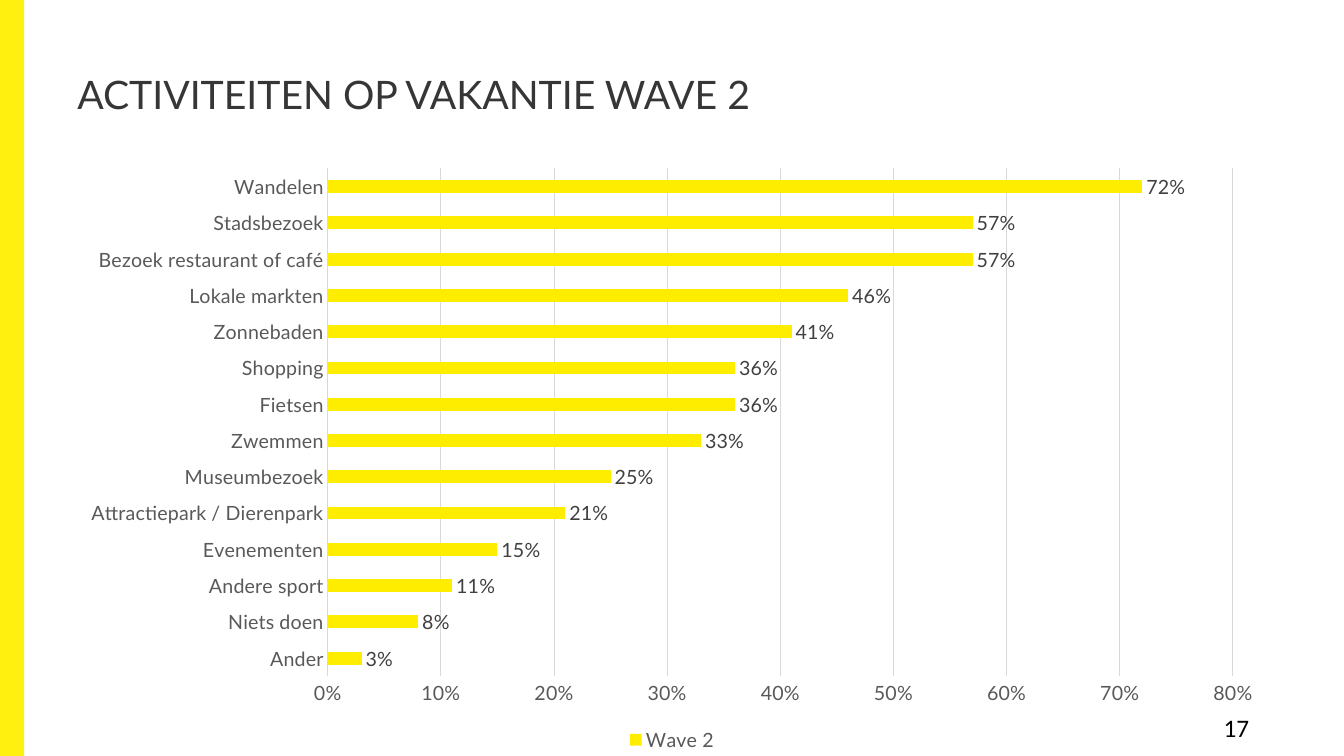
from dataclasses import dataclass

from pptx import Presentation
from pptx import util as u
from pptx.chart.data import CategoryChartData
from pptx.dml.color import RGBColor
from pptx.enum import chart as charts, shapes, text

WIDTH, HEIGHT = u.Inches(13.33), u.Inches(7.5)
MARGIN = 0.05
CONTENT_WIDTH = 0.9
CHART_TOP = 0.207

ACTIVITIES = {
    "Wandelen": 0.72,
    "Stadsbezoek": 0.57,
    "Bezoek restaurant of café": 0.57,
    "Lokale markten": 0.46,
    "Zonnebaden": 0.41,
    "Shopping": 0.36,
    "Fietsen": 0.36,
    "Zwemmen": 0.33,
    "Museumbezoek": 0.25,
    "Attractiepark / Dierenpark": 0.21,
    "Evenementen": 0.15,
    "Andere sport": 0.11,
    "Niets doen": 0.08,
    "Ander": 0.03,
}


@dataclass(frozen=True)
class Theme:
    """Colours, fonts and type sizes of the slide."""

    band: str = "FFF010"
    bar: str = "FFED00"
    title: str = "373636"
    label: str = "404040"
    axis: str = "595959"
    grid: str = "D9D9D9"
    number: str = "000000"
    font: str = "Lato"
    number_font: str = "Calibri"
    title_size: int = 28
    number_size: int = 18
    chart_size: int = 14


THEME = Theme()


def area(left, top, width, height):
    """Turn shares of the slide into a position and size."""
    return (u.Emu(round(left * WIDTH)), u.Emu(round(top * HEIGHT)),
            u.Emu(round(width * WIDTH)), u.Emu(round(height * HEIGHT)))


def style_font(font, size, color, name=THEME.font):
    """Set the size, colour and typeface of a font."""
    font.size = u.Pt(size)
    font.name = name
    font.bold = False
    font.color.rgb = RGBColor.from_string(color)


def style_line(line, color):
    """Draw a thin line in the given colour."""
    line.width = u.Pt(0.75)
    line.color.rgb = RGBColor.from_string(color)


def add_band(slide):
    """Add the coloured band along the left edge."""
    band = slide.shapes.add_shape(shapes.MSO_SHAPE.RECTANGLE, *area(0, 0, 0.018, 1))
    band.shadow.inherit = False
    band.fill.solid()
    band.fill.fore_color.rgb = RGBColor.from_string(THEME.band)
    band.line.fill.background()


def set_title(slide, wording):
    """Place and format the title placeholder."""
    title = slide.shapes.title
    title.left, title.top, title.width, title.height = area(
        MARGIN, 0.04, CONTENT_WIDTH, CHART_TOP - 0.04)
    frame = title.text_frame
    frame.text = wording
    frame.vertical_anchor = text.MSO_ANCHOR.MIDDLE
    paragraph = frame.paragraphs[0]
    paragraph.alignment = text.PP_ALIGN.LEFT
    style_font(paragraph.runs[0].font, THEME.title_size, THEME.title)


def add_page_number(slide, number):
    """Add the page number at the lower right."""
    box = slide.shapes.add_textbox(*area(0.903, 0.936, 0.047, 0.053))
    frame = box.text_frame
    frame.word_wrap = True
    frame.text = str(number)
    style_font(frame.paragraphs[0].runs[0].font,
               THEME.number_size, THEME.number, THEME.number_font)


def style_axis(axis):
    """Give an axis its label font and remove the tick marks."""
    axis.major_tick_mark = charts.XL_TICK_MARK.NONE
    axis.minor_tick_mark = charts.XL_TICK_MARK.NONE
    style_font(axis.tick_labels.font, THEME.chart_size, THEME.axis)


def style_axes(chart):
    """Format the category axis, the percentage axis and its grid."""
    categories, values = chart.category_axis, chart.value_axis
    style_axis(categories)
    style_axis(values)
    style_line(categories.format.line, THEME.grid)
    values.format.line.fill.background()
    values.has_major_gridlines = True
    style_line(values.major_gridlines.format.line, THEME.grid)
    values.minimum_scale, values.maximum_scale, values.major_unit = 0, 0.8, 0.1
    values.tick_labels.number_format = "0%"
    values.tick_labels.number_format_is_linked = False


def style_bars(plot):
    """Colour the bars and show their values at the ends."""
    plot.gap_width = 182
    plot.vary_by_categories = False
    fill = plot.series[0].format.fill
    fill.solid()
    fill.fore_color.rgb = RGBColor.from_string(THEME.bar)
    labels = plot.series[0].data_labels
    labels.show_value = True
    labels.position = charts.XL_LABEL_POSITION.OUTSIDE_END
    labels.number_format = "0%"
    labels.number_format_is_linked = False
    style_font(labels.font, THEME.chart_size, THEME.label)


def add_bar_chart(slide, name, activities):
    """Add the bar chart with the first activity at the top."""
    data = CategoryChartData(number_format="0%")
    data.categories = list(reversed(activities))
    data.add_series(name, list(reversed(activities.values())))
    chart = slide.shapes.add_chart(
        charts.XL_CHART_TYPE.BAR_CLUSTERED,
        *area(MARGIN, CHART_TOP, CONTENT_WIDTH, 1 - CHART_TOP), data).chart
    style_font(chart.font, THEME.chart_size, THEME.number)
    chart.has_title = False
    chart.has_legend = True
    chart.legend.position = charts.XL_LEGEND_POSITION.BOTTOM
    chart.legend.include_in_layout = False
    style_font(chart.legend.font, THEME.chart_size, THEME.axis)
    style_axes(chart)
    style_bars(chart.plots[0])


def main():
    """Build the slide and save it."""
    presentation = Presentation()
    presentation.slide_width, presentation.slide_height = WIDTH, HEIGHT
    slide = presentation.slides.add_slide(presentation.slide_layouts[5])
    add_band(slide)
    add_page_number(slide, 17)
    set_title(slide, "ACTIVITEITEN OP VAKANTIE WAVE 2")
    add_bar_chart(slide, "Wave 2", ACTIVITIES)
    presentation.save("out.pptx")


if __name__ == "__main__":
    main()
